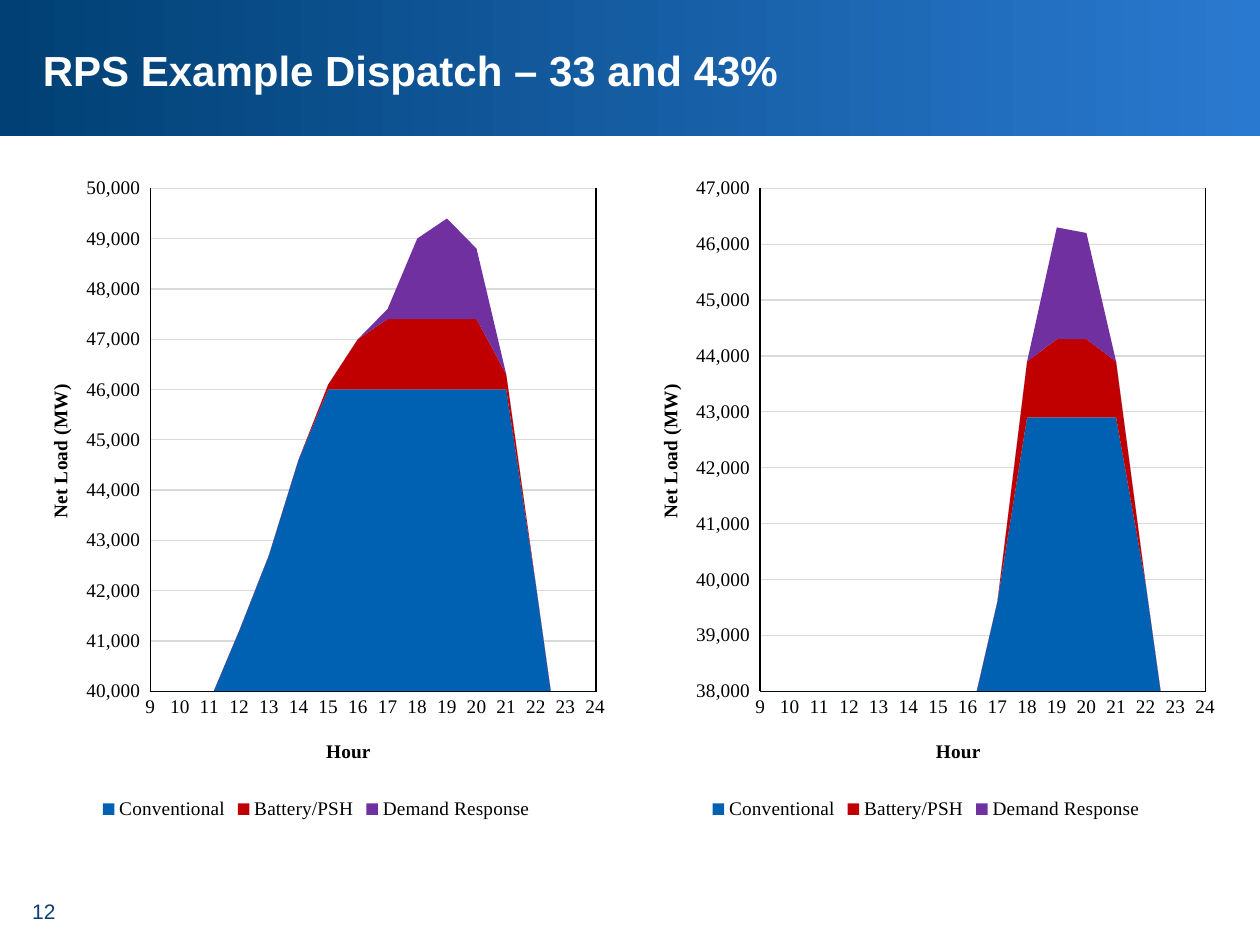
from lxml import etree
from pptx import Presentation
from pptx.chart.data import CategoryChartData
from pptx.dml.color import RGBColor
from pptx.enum.chart import XL_CHART_TYPE, XL_LEGEND_POSITION, XL_TICK_MARK
from pptx.enum.shapes import MSO_CONNECTOR, MSO_SHAPE
from pptx.enum.text import MSO_ANCHOR, PP_ALIGN
from pptx.oxml import parse_xml
from pptx.oxml.ns import nsdecls, qn
from pptx.util import Inches, Pt

COLORS = {
    "navy": "004074", "sky": "2A79D0", "number": "0C3E70", "white": "FFFFFF",
    "black": "000000", "grid": "D9D9D9",
    "Conventional": "0061B2", "Battery/PSH": "C00000", "Demand Response": "7030A0",
}
CHART_TOP, CHART_WIDTH, CHART_HEIGHT = 1.3, 4.8, 5.25
PLOT_LEFT, PLOT_TOP, PLOT_WIDTH, PLOT_HEIGHT = 1.08, 0.19, 3.54, 4.0  # inside the chart
HOURS = [str(hour) for hour in range(9, 25)]
NUMBER_FORMAT = '_(* #,##0_);_(* \\(#,##0\\);_(* "-"??_);_(@_)'

CHARTS = [
    {"left": 0.11, "minimum": 40000, "maximum": 50000, "series": {
        "Conventional": [36300, 38100, 39800, 41200, 42700, 44600] + [46000] * 7
        + [42100, 37900, 33900],
        "Battery/PSH": [0] * 6 + [100, 1000] + [1400] * 4 + [300, 0, 0, 0],
        "Demand Response": [0] * 8 + [200, 1600, 2000, 1400] + [0] * 4}},
    {"left": 4.95, "minimum": 38000, "maximum": 47000, "series": {
        "Conventional": [27700, 28200, 29000, 29900, 31200, 33400, 35500, 37300, 39600]
        + [42900] * 4 + [39900, 36100, 32300],
        "Battery/PSH": [0] * 9 + [1000, 1400, 1400, 1000, 0, 0, 0],
        "Demand Response": [0] * 10 + [2000, 1900] + [0] * 4}},
]


def color(name):
    return RGBColor.from_string(COLORS[name])


def manual_layout(left, top, size=None):
    """Return a c:layout element; lengths are inches inside the chart."""
    values = {"xMode": "edge", "yMode": "edge",
              "x": round(left / CHART_WIDTH, 4), "y": round(top / CHART_HEIGHT, 4)}
    if size:
        values = {"layoutTarget": "inner", **values,
                  "w": round(size[0] / CHART_WIDTH, 4),
                  "h": round(size[1] / CHART_HEIGHT, 4)}
    parts = "".join(f'<c:{tag} val="{value}"/>' for tag, value in values.items())
    return parse_xml(f'<c:layout {nsdecls("c")}><c:manualLayout>{parts}'
                     '</c:manualLayout></c:layout>')


presentation = Presentation()
presentation.slide_width = Inches(10)
presentation.slide_height = Inches(7.5)
slide = presentation.slides.add_slide(presentation.slide_layouts[6])

# Title band
band = slide.shapes.add_shape(MSO_SHAPE.RECTANGLE, 0, 0, Inches(10), Inches(1.08))
band.shadow.inherit = False
band.line.fill.background()
band.fill.gradient()
band.fill.gradient_angle = 0
for stop, position, name in zip(band.fill.gradient_stops, (0, 1), ("navy", "sky")):
    stop.position = position
    stop.color.rgb = color(name)

# Title and slide number
texts = [
    {"text": "RPS Example Dispatch – 33 and 43%", "at": (0.34, 0.15, 9.32, 0.66),
     "color": "white", "align": PP_ALIGN.LEFT, "spacing": 0.95,
     "font": {"size": Pt(24), "bold": True},
     "frame": {"word_wrap": True, "vertical_anchor": MSO_ANCHOR.BOTTOM,
               "margin_left": 0, "margin_right": 0}},
    {"text": "12", "at": (0.13, 7.08, 0.41, 0.3),
     "color": "number", "align": PP_ALIGN.RIGHT, "spacing": 1.0,
     "font": {"size": Pt(12)}, "frame": {"word_wrap": False}},
]
for item in texts:
    text_frame = slide.shapes.add_textbox(*map(Inches, item["at"])).text_frame
    for attribute, value in item["frame"].items():
        setattr(text_frame, attribute, value)
    paragraph = text_frame.paragraphs[0]
    paragraph.text = item["text"]
    paragraph.alignment = item["align"]
    paragraph.line_spacing = item["spacing"]
    for attribute, value in {"name": "Arial", **item["font"]}.items():
        setattr(paragraph.font, attribute, value)
    paragraph.font.color.rgb = color(item["color"])

# Stacked area charts
for item in CHARTS:
    chart_data = CategoryChartData()
    chart_data.categories = HOURS
    for name, values in item["series"].items():
        chart_data.add_series(name, values)
    chart = slide.shapes.add_chart(
        XL_CHART_TYPE.AREA_STACKED, Inches(item["left"]), Inches(CHART_TOP),
        Inches(CHART_WIDTH), Inches(CHART_HEIGHT), chart_data).chart
    chart.has_title = False
    chart.font.name = "Times New Roman"
    chart.font.size = Pt(11)
    chart.font.color.rgb = color("black")
    chart.has_legend = True
    chart.legend.position = XL_LEGEND_POSITION.BOTTOM
    chart.legend.include_in_layout = False
    for series in chart.plots[0].series:
        series.format.fill.solid()
        series.format.fill.fore_color.rgb = color(series.name)

    category_axis, value_axis = chart.category_axis, chart.value_axis
    for axis, title, left, top in ((category_axis, "Hour", 2.45, 4.54),
                                   (value_axis, "Net Load (MW)", 0.24, 1.72)):
        axis.major_tick_mark = axis.minor_tick_mark = XL_TICK_MARK.NONE
        axis.format.line.color.rgb = color("black")
        axis.format.line.width = Pt(0.75)
        axis_title = axis.axis_title
        axis_title.text_frame.text = title
        font = axis_title.text_frame.paragraphs[0].runs[0].font
        for attribute, value in {"name": "Times New Roman", "size": Pt(11),
                                 "bold": True}.items():
            setattr(font, attribute, value)
        font.color.rgb = color("black")
        title_element = axis_title._element
        for layout in title_element.findall(qn("c:layout")):
            title_element.remove(layout)
        title_element.find(qn("c:tx")).addnext(manual_layout(left, top))
    body = value_axis.axis_title.text_frame._txBody.find(qn("a:bodyPr"))
    body.set("rot", "-5400000")
    body.set("vert", "horz")

    category_axis.has_major_gridlines = False
    value_axis.minimum_scale = item["minimum"]
    value_axis.maximum_scale = item["maximum"]
    value_axis.major_unit = 1000
    value_axis.has_major_gridlines = True
    value_axis.major_gridlines.format.line.color.rgb = color("grid")
    value_axis.major_gridlines.format.line.width = Pt(0.75)
    value_axis.tick_labels.number_format = NUMBER_FORMAT
    value_axis.tick_labels.number_format_is_linked = False
    value_axis._element.find(qn("c:crossBetween")).set("val", "midCat")

    chart_space = chart._chartSpace
    plot_area = chart_space.chart.plotArea
    for layout in plot_area.findall(qn("c:layout")):
        plot_area.remove(layout)
    plot_area.insert(0, manual_layout(PLOT_LEFT, PLOT_TOP, (PLOT_WIDTH, PLOT_HEIGHT)))
    white = f'<a:solidFill><a:srgbClr val="{COLORS["white"]}"/></a:solidFill>'
    chart_space.chart.addnext(parse_xml(
        f'<c:spPr {nsdecls("c", "a")}>{white}<a:ln w="9525">{white}</a:ln></c:spPr>'))

    # Right edge of the plot
    edge = Inches(item["left"] + PLOT_LEFT + PLOT_WIDTH)
    plot_top = CHART_TOP + PLOT_TOP
    line = slide.shapes.add_connector(MSO_CONNECTOR.STRAIGHT, edge, Inches(plot_top),
                                      edge, Inches(plot_top + PLOT_HEIGHT))
    line.line.color.rgb = color("black")
    line.line.width = Pt(0.75)
    etree.SubElement(line._element.spPr, qn("a:effectLst"))

presentation.save("out.pptx")
